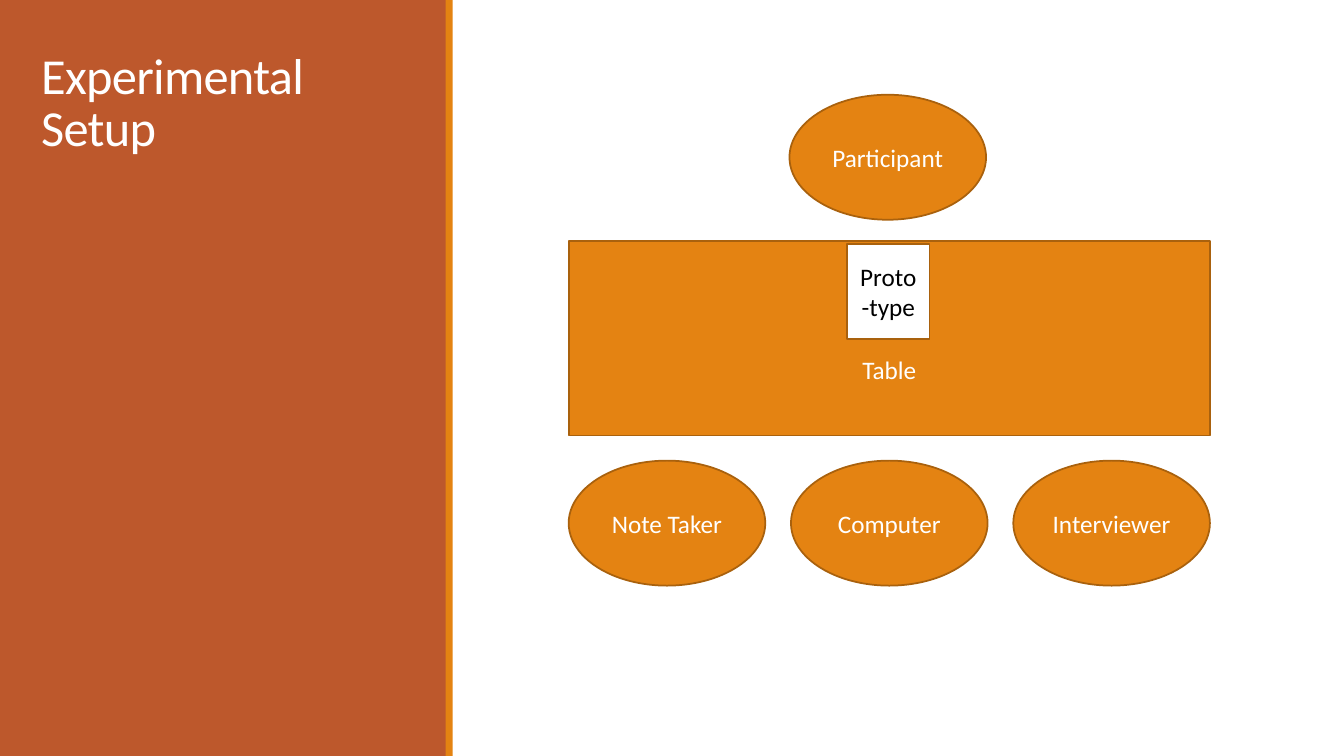
from pptx import Presentation
from pptx.dml.color import RGBColor
from pptx.enum import shapes, text
from pptx.util import Inches, Pt

ORANGE, BROWN, RUST = "E48312", "A9610D", "BD582C"
WHITE, BLACK = "FFFFFF", "000000"


def color(value):
    return RGBColor.from_string(value)


def add_box(kind, left, top, width, height, fill, label="", ink=WHITE, outline=BROWN):
    shape = slide.shapes.add_shape(
        kind, Inches(left), Inches(top), Inches(width), Inches(height))
    shape.shadow.inherit = False
    shape.fill.solid()
    shape.fill.fore_color.rgb = color(fill)
    if outline:
        shape.line.color.rgb = color(outline)
        shape.line.width = Pt(1.25)
    else:
        shape.line.fill.background()
    if label:
        shape.text_frame.text = label
        shape.text_frame.vertical_anchor = text.MSO_ANCHOR.MIDDLE
        paragraph = shape.text_frame.paragraphs[0]
        paragraph.alignment = text.PP_ALIGN.CENTER
        paragraph.font.name = "Calibri"
        paragraph.font.size = Pt(18)
        paragraph.font.color.rgb = color(ink)
    return shape


presentation = Presentation()
presentation.slide_width = Inches(13.33)
presentation.slide_height = Inches(7.5)
slide = presentation.slides.add_slide(presentation.slide_layouts[6])
RECTANGLE = shapes.MSO_SHAPE.RECTANGLE
OVAL = shapes.MSO_SHAPE.OVAL

# Side panel
add_box(RECTANGLE, 0, 0, 4.43, 7.5, RUST, outline=None)
add_box(RECTANGLE, 4.42, 0, 0.07, 7.5, ORANGE, outline=None)

# Title
title = slide.shapes.add_textbox(Inches(0.31), Inches(0.44), Inches(3.95), Inches(1.16))
title.text_frame.word_wrap = True
title.text_frame.vertical_anchor = text.MSO_ANCHOR.BOTTOM
title.text_frame.text = "Experimental Setup"
paragraph = title.text_frame.paragraphs[0]
paragraph.line_spacing = 0.85
paragraph.font.name = "Calibri"
paragraph.font.size = Pt(36)
paragraph.font.color.rgb = color(WHITE)
paragraph.runs[0].font._element.set("spc", "-50")

# Table, with its label pushed below the prototype
table = add_box(RECTANGLE, 5.64, 2.39, 6.36, 1.93, ORANGE, "Table")
table.text_frame.margin_top = Inches(0.66)

# People and computer around the table
for column, label in enumerate(["Note Taker", "Computer", "Interviewer"]):
    add_box(OVAL, 5.64 + 2.205 * column, 4.57, 1.95, 1.24, ORANGE, label)
add_box(OVAL, 7.83, 0.94, 1.95, 1.24, ORANGE, "Participant")

# Prototype on the table
add_box(RECTANGLE, 8.4, 2.42, 0.82, 0.94, WHITE, "Proto-type", BLACK)

presentation.save("out.pptx")
